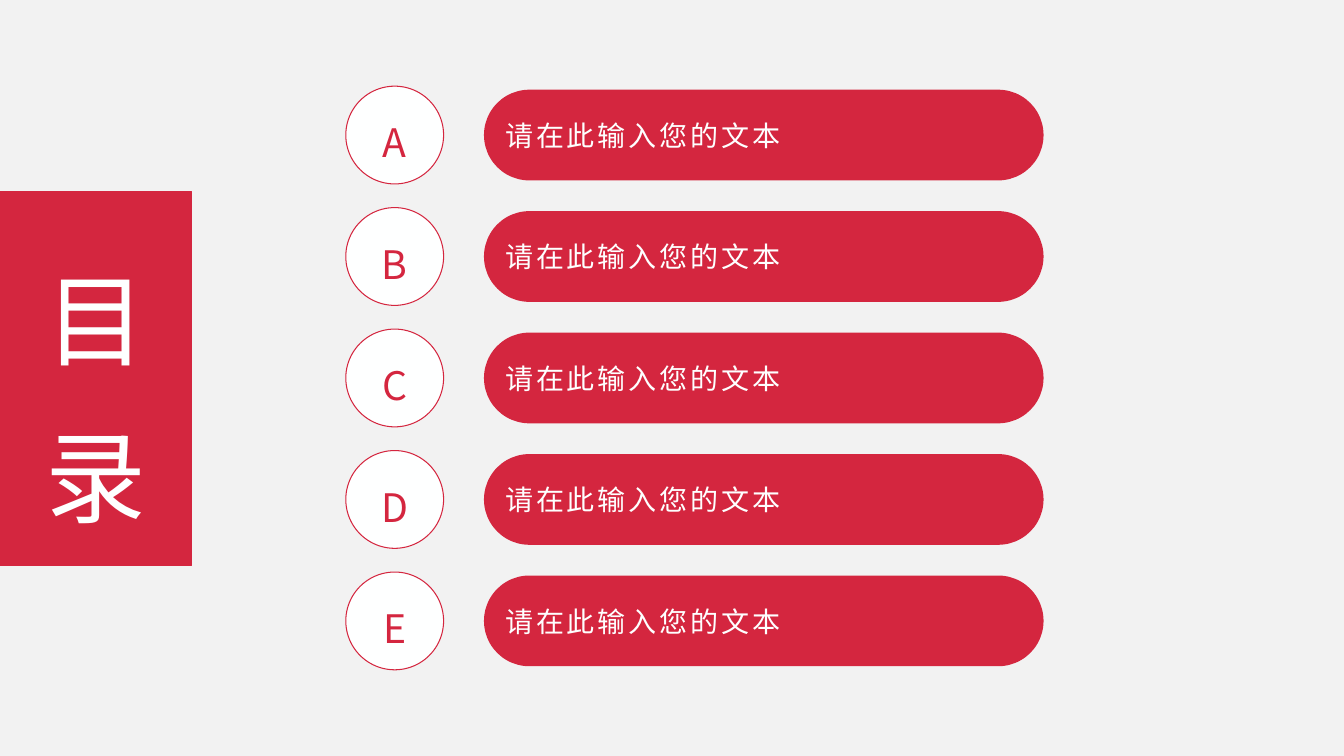
from pptx import Presentation
from pptx.dml.color import RGBColor
from pptx.enum.shapes import MSO_SHAPE
from pptx.enum.text import MSO_ANCHOR, MSO_AUTO_SIZE, PP_ALIGN
from pptx.oxml.ns import qn
from pptx.util import Inches, Pt
from lxml.etree import SubElement

FONT = "Noto Sans CJK SC"
RED, WHITE, GREY = "D4263F", "FEFFFF", "F2F2F2"
ITEMS = dict.fromkeys("ABCDE", "请在此输入您的文本")

# Inches: column edges, sizes, and centres of the first and last row
DISC_X, DISC = 3.43, 0.97
PILL_X, PILL_W, PILL_H = 4.8, 5.55, 0.9
FIRST, LAST = 1.34, 6.16
PITCH = (LAST - FIRST) / (len(ITEMS) - 1)


def paint(color, code):
    """Set a fill, line or font colour from a hex string."""
    color.rgb = RGBColor.from_string(code)


def fill(target, code):
    target.fill.solid()
    paint(target.fill.fore_color, code)


def outline(shape, code):
    paint(shape.line.color, code)
    shape.line.width = Pt(0.75)


def write(shape, text, size, color, align=PP_ALIGN.CENTER, lead=1.0, inset=0, track=0):
    """Put one formatted paragraph in a shape; track is letter spacing in points."""
    frame = shape.text_frame
    frame.word_wrap = True
    frame.auto_size = MSO_AUTO_SIZE.NONE
    frame.vertical_anchor = MSO_ANCHOR.MIDDLE
    frame.margin_left = Inches(inset)
    frame.margin_top = frame.margin_right = frame.margin_bottom = 0
    para = frame.paragraphs[0]
    para.alignment, para.line_spacing = align, lead
    run = para.add_run()
    run.text = text
    run.font.size, run.font.name = Pt(size), FONT
    paint(run.font.color, color)
    props = run.font._element
    SubElement(props, qn("a:ea")).set("typeface", FONT)
    if track:
        props.set("spc", str(track * 100))


def add_form(slide, kind, left, mid, width, height, color):
    """Add a filled preset shape centred on the row at mid."""
    shape = slide.shapes.add_shape(kind, Inches(left), Inches(mid - height / 2),
                                   Inches(width), Inches(height))
    shape.shadow.inherit = False
    fill(shape, color)
    return shape


def add_item(slide, mid, letter, text):
    pill = add_form(slide, MSO_SHAPE.ROUNDED_RECTANGLE, PILL_X, mid, PILL_W, PILL_H, RED)
    pill.adjustments[0] = 0.5
    pill.line.fill.background()
    write(pill, text, 20, WHITE, align=PP_ALIGN.LEFT, inset=0.08, track=2)

    disc = add_form(slide, MSO_SHAPE.OVAL, DISC_X, mid, DISC, DISC, WHITE)
    outline(disc, RED)
    write(disc, letter, 28, RED, lead=1.3)


def set_title(slide, text):
    title = slide.shapes.title
    title.left, title.top = 0, Inches(1.9)
    title.width, title.height = Inches(1.9), Inches(3.71)
    fill(title, RED)
    outline(title, RED)
    write(title, text, 72, WHITE, lead=1.3)


def main():
    deck = Presentation()
    deck.slide_width, deck.slide_height = Inches(13.33), Inches(7.5)
    slide = deck.slides.add_slide(deck.slide_layouts.get_by_name("Title Only"))
    fill(slide.background, GREY)
    set_title(slide, "目录")
    for row, (letter, text) in enumerate(ITEMS.items()):
        add_item(slide, FIRST + row * PITCH, letter, text)
    deck.save("out.pptx")


if __name__ == "__main__":
    main()
